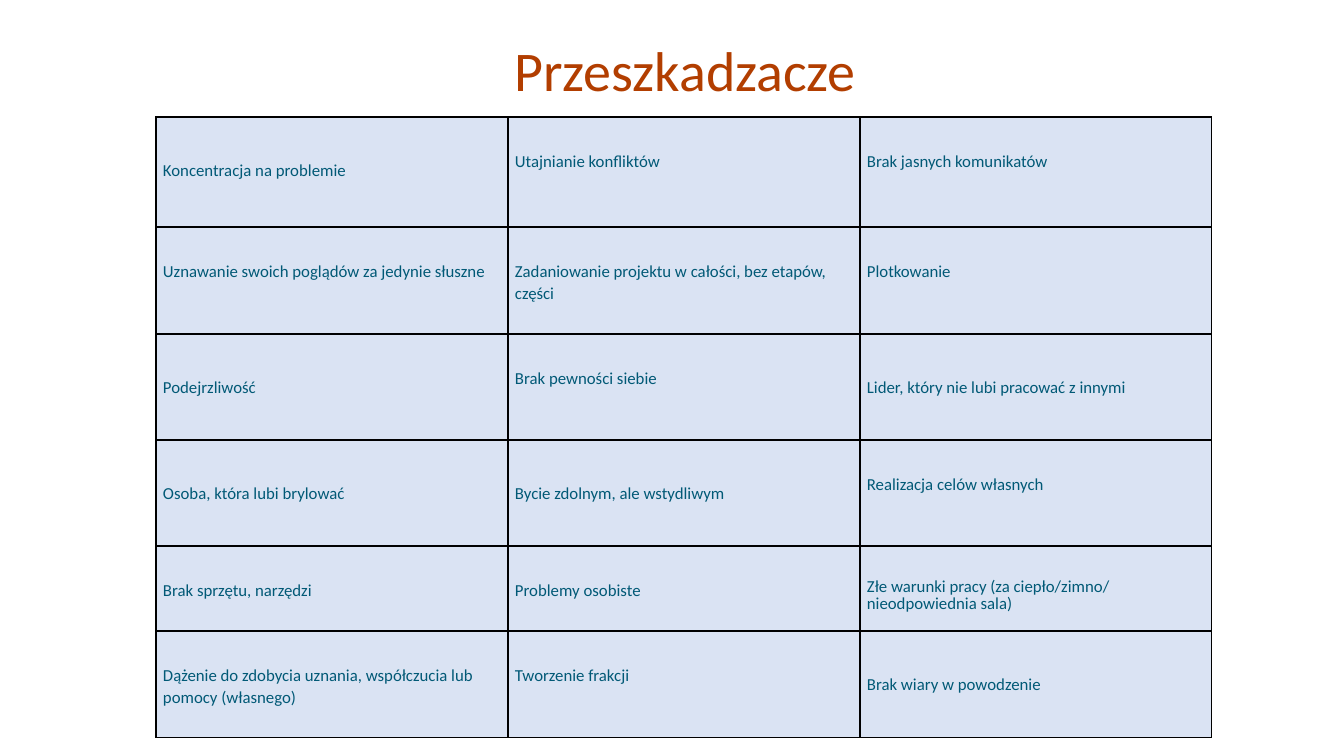
"""Build the slide "Przeszkadzacze": a title above a three-column table."""
import pptx
import pptx.dml.color
import pptx.enum.text
import pptx.oxml
import pptx.oxml.ns
import pptx.util

TITLE = "Przeszkadzacze"
LOOSE = {"top": 33, "spacing": 1.07}
TIGHT = {"top": 45, "spacing": 0.87}
RAISED = {"top": 32, "spacing": 0.87}
ROWS = [
    (110, [("Koncentracja na problemie", TIGHT),
           ("Utajnianie konfliktów", LOOSE),
           ("Brak jasnych komunikatów", LOOSE)]),
    (107, [("Uznawanie swoich poglądów za jedynie słuszne", LOOSE),
           ("Zadaniowanie projektu w całości, bez etapów, części", LOOSE),
           ("Plotkowanie", LOOSE)]),
    (106, [("Podejrzliwość", TIGHT),
           ("Brak pewności siebie", LOOSE),
           ("Lider, który nie lubi pracować z innymi", TIGHT)]),
    (106, [("Osoba, która lubi brylować", TIGHT),
           ("Bycie zdolnym, ale wstydliwym", TIGHT),
           ("Realizacja celów własnych", LOOSE)]),
    (85, [("Brak sprzętu, narzędzi", LOOSE),
          ("Problemy osobiste", LOOSE),
          ("Złe warunki pracy (za ciepło/zimno/ nieodpowiednia sala)", RAISED)]),
    (107, [("Dążenie do zdobycia uznania, współczucia lub pomocy (własnego)", LOOSE),
           ("Tworzenie frakcji", LOOSE),
           ("Brak wiary w powodzenie", TIGHT)]),
]
COLORS = {"title": "B23E00", "text": "015976", "fill": "DAE3F3", "border": "000000"}
FONT = "Calibri"
SLIDE = (1344, 756)
TITLE_BOX = (145, 0, 1080, 146)
TABLE_LEFT, TABLE_TOP = 156, 117
COLUMN_WIDTH = 352
SIDE_MARGIN = 7
BORDER_POINTS = 1


def px(length):
    return round(length * 914400 / 100.8)


def rgb(name):
    return pptx.dml.color.RGBColor.from_string(COLORS[name])


def write(frame, text, *, size, color, spacing, align):
    frame.word_wrap = True
    para = frame.paragraphs[0]
    para.alignment = align
    para.line_spacing = spacing
    span = para.add_run()
    span.text = text
    span.font.name = FONT
    span.font.size = pptx.util.Pt(size)
    span.font.bold = False
    span.font.color.rgb = rgb(color)


def add_borders(cell):
    properties = cell._tc.get_or_add_tcPr()
    for index, side in enumerate(("lnL", "lnR", "lnT", "lnB")):
        line = pptx.oxml.parse_xml(
            f'<a:{side} {pptx.oxml.ns.nsdecls("a")} w="{pptx.util.Pt(BORDER_POINTS)}">'
            f'<a:solidFill><a:srgbClr val="{COLORS["border"]}"/></a:solidFill></a:{side}>')
        properties.insert(index, line)


def add_title(page):
    box = page.shapes.title
    box.left, box.top, box.width, box.height = map(px, TITLE_BOX)
    frame = box.text_frame
    frame.auto_size = pptx.enum.text.MSO_AUTO_SIZE.NONE
    frame.vertical_anchor = pptx.enum.text.MSO_ANCHOR.MIDDLE
    write(frame, TITLE, size=40, color="title", spacing=0.9,
          align=pptx.enum.text.PP_ALIGN.CENTER)


def add_obstacles(page):
    columns = len(ROWS[0][1])
    table = page.shapes.add_table(
        len(ROWS), columns, px(TABLE_LEFT), px(TABLE_TOP),
        px(columns * COLUMN_WIDTH), px(sum(height for height, _ in ROWS))).table
    table.first_row = table.horz_banding = False
    for column in table.columns:
        column.width = px(COLUMN_WIDTH)
    for row, (height, entries) in enumerate(ROWS):
        table.rows[row].height = px(height)
        for column, (text, layout) in enumerate(entries):
            cell = table.cell(row, column)
            cell.margin_left = cell.margin_right = px(SIDE_MARGIN)
            cell.margin_top, cell.margin_bottom = px(layout["top"]), 0
            cell.vertical_anchor = pptx.enum.text.MSO_ANCHOR.TOP
            cell.fill.solid()
            cell.fill.fore_color.rgb = rgb("fill")
            add_borders(cell)
            write(cell.text_frame, text, size=12, color="text",
                  spacing=layout["spacing"], align=pptx.enum.text.PP_ALIGN.LEFT)


def main():
    deck = pptx.Presentation()
    deck.slide_width, deck.slide_height = map(px, SLIDE)
    page = deck.slides.add_slide(deck.slide_layouts[5])
    add_title(page)
    add_obstacles(page)
    deck.save("out.pptx")


if __name__ == "__main__":
    main()
